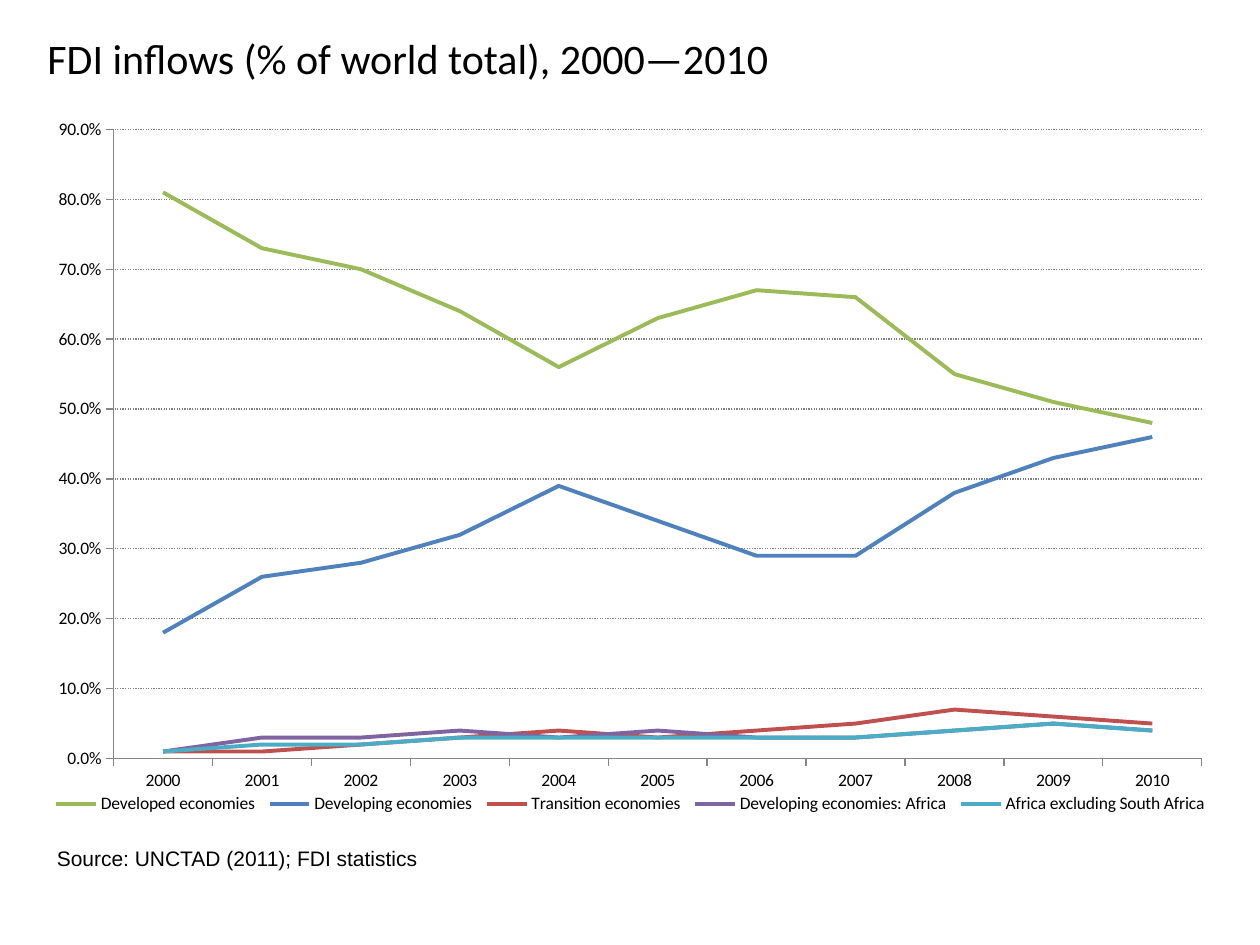
from dataclasses import dataclass

from lxml.etree import SubElement
from pptx import Presentation
from pptx.chart.data import CategoryChartData
from pptx.dml.color import RGBColor
from pptx.enum.chart import XL_CHART_TYPE, XL_LEGEND_POSITION, XL_MARKER_STYLE, XL_TICK_MARK
from pptx.enum.dml import MSO_LINE
from pptx.enum.text import MSO_ANCHOR
from pptx.oxml.ns import qn
from pptx.util import Pt


@dataclass(frozen=True)
class Theme:
    text: str = "000000"
    axis: str = "868686"
    grid: str = "808080"
    heading: str = "Calibri"
    body: str = "Arial"
    title_size: int = 24
    source_size: int = 12
    chart_size: int = 10


YEARS = [str(year) for year in range(2000, 2011)]
# Name, colour, share of world inflows
SERIES = [
    ("Developed economies", "9BBB59",
     [0.81, 0.73, 0.7, 0.64, 0.56, 0.63, 0.67, 0.66, 0.55, 0.51, 0.48]),
    ("Developing economies", "4F81BD",
     [0.18, 0.26, 0.28, 0.32, 0.39, 0.34, 0.29, 0.29, 0.38, 0.43, 0.46]),
    ("Transition economies", "C0504D",
     [0.01, 0.01, 0.02, 0.03, 0.04, 0.03, 0.04, 0.05, 0.07, 0.06, 0.05]),
    ("Developing economies: Africa", "8064A2",
     [0.01, 0.03, 0.03, 0.04, 0.03, 0.04, 0.03, 0.03, 0.04, 0.05, 0.04]),
    ("Africa excluding South Africa", "4BACC6",
     [0.01, 0.02, 0.02, 0.03, 0.03, 0.03, 0.03, 0.03, 0.04, 0.05, 0.04]),
]


class SlideBuilder:
    def __init__(self, s, theme):
        self.s = s
        self.theme = theme

    def text(self, x, y, w, h, words, font, size):
        tf = self.s.shapes.add_textbox(Pt(x), Pt(y), Pt(w), Pt(h)).text_frame
        tf.word_wrap = True
        tf.vertical_anchor = MSO_ANCHOR.MIDDLE
        r = tf.paragraphs[0].add_run()
        r.text = words
        r.font.name = font
        r.font.size = Pt(size)
        r.font.color.rgb = RGBColor.from_string(self.theme.text)

    def line(self, fmt, color, width):
        fmt.color.rgb = RGBColor.from_string(color)
        fmt.width = Pt(width)

    def place(self, layout, x, y, w, h, inner=False):
        """Fix a chart part at fractions of the chart's size."""
        manual = SubElement(layout, qn("c:manualLayout"))
        settings = [("layoutTarget", "inner")] if inner else []
        settings += [("xMode", "edge"), ("yMode", "edge"),
                     ("x", x), ("y", y), ("w", w), ("h", h)]
        for tag, value in settings:
            SubElement(manual, qn(f"c:{tag}")).set("val", str(value))

    def line_chart(self, x, y, w, h, categories, series):
        data = CategoryChartData(number_format="0.0%")
        data.categories = categories
        for name, _, shares in series:
            data.add_series(name, shares)
        chart = self.s.shapes.add_chart(
            XL_CHART_TYPE.LINE, Pt(x), Pt(y), Pt(w), Pt(h), data).chart
        chart.has_title = False
        chart.font.name = self.theme.heading
        chart.font.size = Pt(self.theme.chart_size)
        chart.font.color.rgb = RGBColor.from_string(self.theme.text)

        # Lines
        plot = chart.plots[0]
        plot.vary_by_categories = False
        for line, (_, color, _) in zip(plot.series, series):
            line.smooth = False
            line.marker.style = XL_MARKER_STYLE.NONE
            self.line(line.format.line, color, 2.25)

        # Axes
        for axis in (chart.category_axis, chart.value_axis):
            axis.major_tick_mark = XL_TICK_MARK.OUTSIDE
            self.line(axis.format.line, self.theme.axis, 0.75)
        axis = chart.value_axis
        axis.minimum_scale, axis.maximum_scale, axis.major_unit = 0, 0.9, 0.1
        axis.tick_labels.number_format = "0.0%"
        axis.tick_labels.number_format_is_linked = False
        grid = axis.major_gridlines.format.line
        self.line(grid, self.theme.grid, 0.75)
        grid.dash_style = MSO_LINE.ROUND_DOT

        # Legend and plot area
        chart.has_legend = True
        legend = chart.legend
        legend.position = XL_LEGEND_POSITION.BOTTOM
        legend.include_in_layout = False
        legend.font.size = Pt(self.theme.chart_size)
        legend_layout = legend._element.get_or_add_layout()
        self.place(legend_layout, 0.01, 0.92, 0.98, 0.05)
        area = chart._chartSpace.chart.plotArea
        layout = area.find(qn("c:layout"))
        if layout is None:
            layout = SubElement(area, qn("c:layout"))
            area.insert(0, layout)
        self.place(layout, 0.066, 0.032, 0.914, 0.852, inner=True)


def main():
    prs = Presentation()
    prs.slide_width, prs.slide_height = Pt(720), Pt(540)
    theme = Theme()
    b = SlideBuilder(prs.slides.add_slide(prs.slide_layouts[6]), theme)

    # Title
    b.text(20, 12.7, 680, 40, "FDI inflows (% of world total), 2000—2010",
           theme.heading, theme.title_size)
    # Source line
    b.text(25.4, 479.5, 255, 22, "Source: UNCTAD (2011); FDI statistics",
           theme.body, theme.source_size)
    # Inflow shares by group
    b.line_chart(20, 60.5, 680.4, 422, YEARS, SERIES)

    prs.save("out.pptx")


if __name__ == "__main__":
    main()
